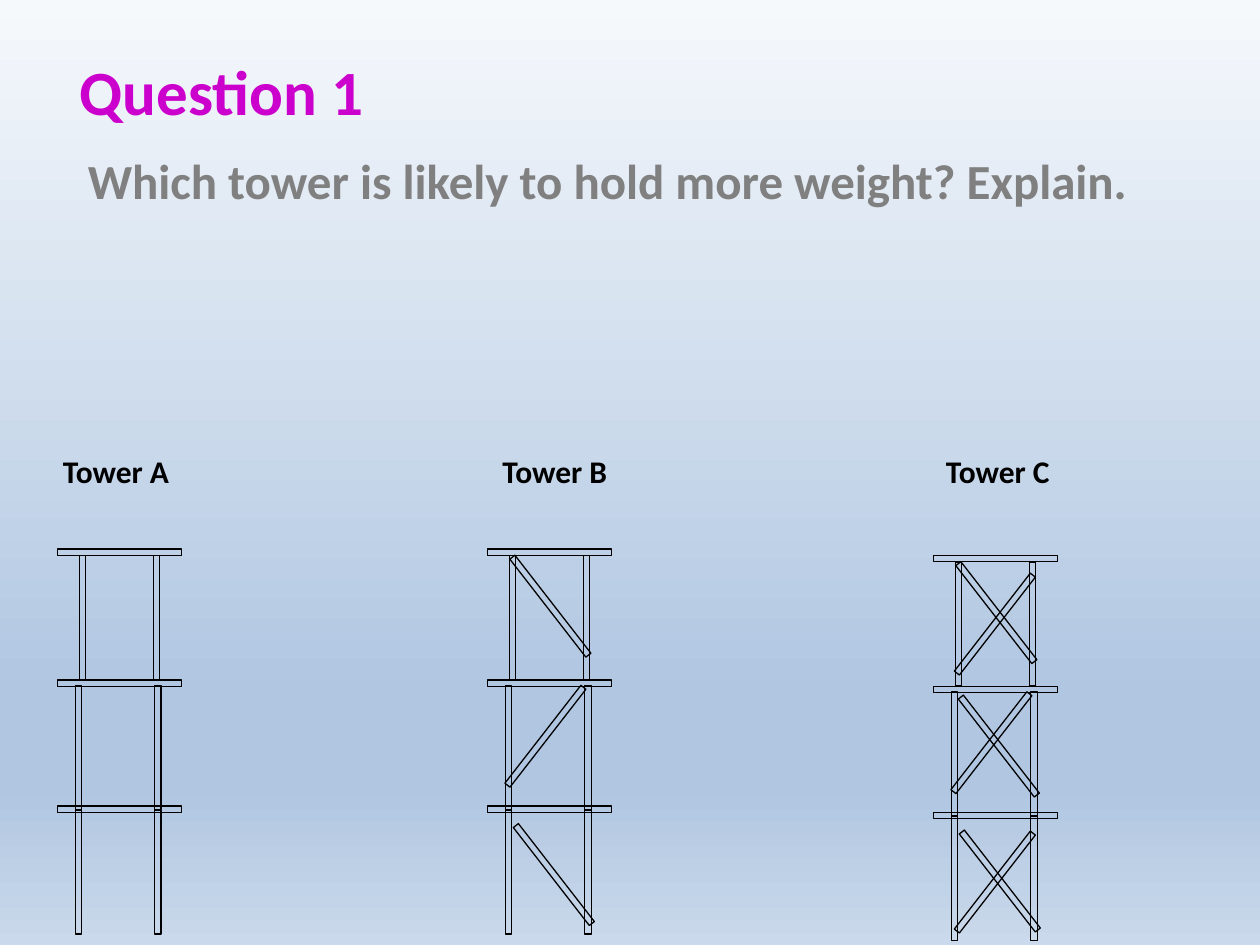
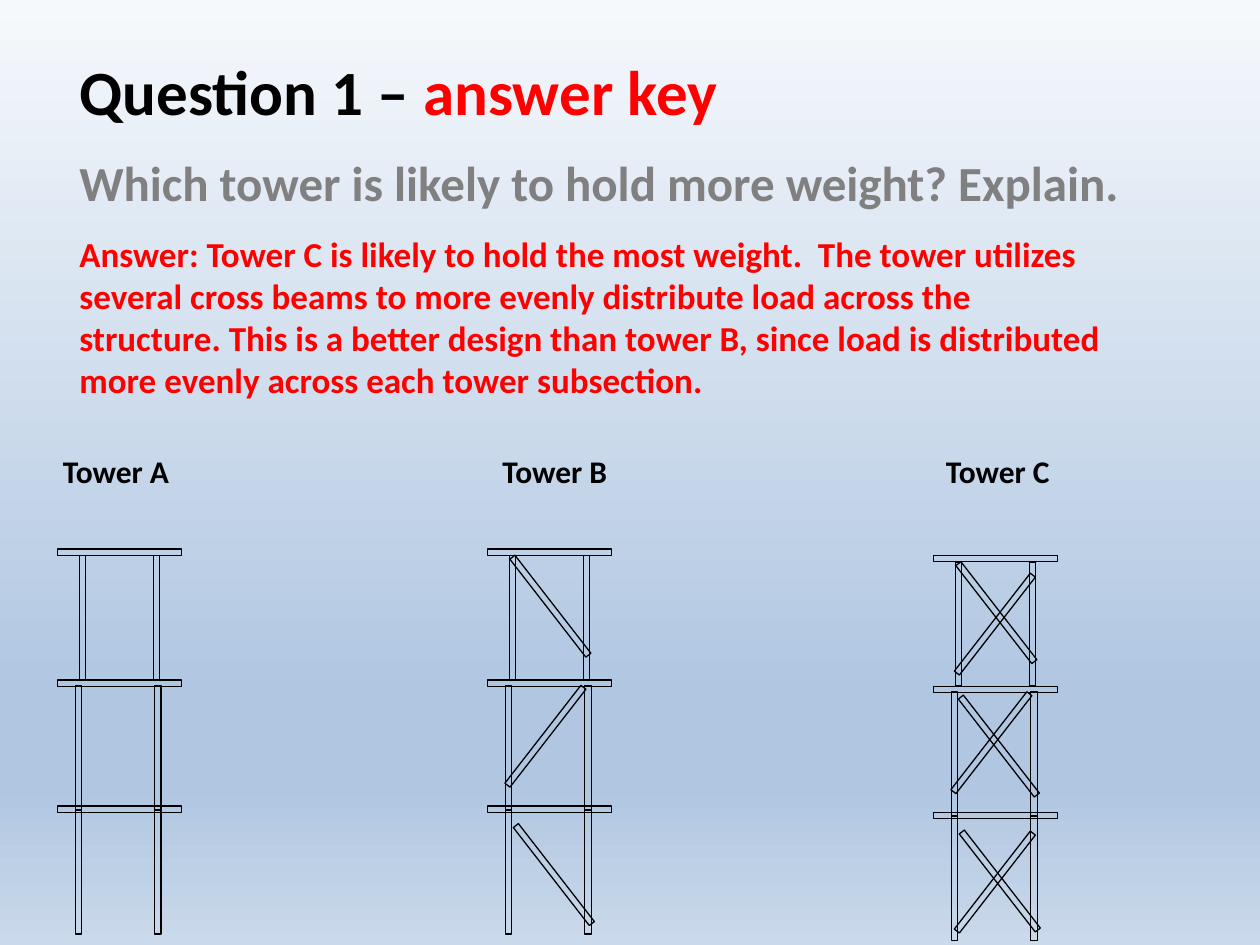
import pptx
import pptx.dml.color
import pptx.enum.shapes
import pptx.enum.text
import pptx.oxml.ns
import pptx.util
from lxml import etree
from pptx.util import Cm

COLORS = {
    "black": "000000",
    "grey": "808080",
    "magenta": "CC00CC",
    "red": "FF0000",
    "sky_top": "F6F9FC",
    "sky_deep": "B0C6E1",
    "sky_bottom": "CAD9EB",
}
FONT = "Calibri"
BACKGROUND_STOPS = [(0, "sky_top"), (74, "sky_deep"), (83, "sky_deep"), (100, "sky_bottom")]

QUESTION = "Which tower is likely to hold more weight? Explain."
ANSWER = (
    "Answer: Tower C is likely to hold the most weight.  The tower utilizes several "
    "cross beams to more evenly distribute load across the structure. This is a better "
    "design than tower B, since load is distributed more evenly across each tower subsection."
)

# Stick places are centimetres from the tower's own corner: left, top, rotation.
FALLING, RISING, LEVEL = 142.2, 217.8, 270
STICK_WIDTH, STICK_LENGTH = 0.13, 2.5
STOREY_TOPS = [0, 2.62, 5.13]
POST_LEFTS = [(0.08, 1.57), (0, 1.6), (0, 1.6)]
BEAM_TOPS = [-1.32, 1.32, 3.86]
FRAME = [
    (left, top, 0) for top, lefts in zip(STOREY_TOPS, POST_LEFTS) for left in lefts
] + [(0.83, top, LEVEL) for top in BEAM_TOPS]
SINGLE_BRACES = [(0.84, -0.23, FALLING), (0.74, 2.39, RISING), (0.91, 5.18, FALLING)]
SECOND_BRACES = [(0.81, 0, RISING), (0.89, 2.46, FALLING), (0.81, 5.2, RISING)]

# Name, tower left, tower top, label left, label width, braces
TOWERS = [
    ("Tower A", 1.52, 11.2, 1.02, 4.88, []),
    ("Tower B", 10.19, 11.2, 9.88, 3, SINGLE_BRACES),
    ("Tower C", 19.18, 11.33, 18.82, 3, SINGLE_BRACES + SECOND_BRACES),
]

# Title parts, question left and top, answer
PAGES = [
    ([("Question 1", "magenta")], 1.52, 2.9, None),
    ([("Question 1 – ", "black"), ("answer key", "red")], 1.35, 2.95, ANSWER),
]


def write_text(box, place, parts, size):
    """Place a box, given in centimetres, and fill it with coloured spans."""
    box.left, box.top, box.width, box.height = [Cm(length) for length in place]
    frame = box.text_frame
    frame.word_wrap = True
    frame.auto_size = pptx.enum.text.MSO_AUTO_SIZE.SHAPE_TO_FIT_TEXT
    frame.vertical_anchor = pptx.enum.text.MSO_ANCHOR.TOP
    para = frame.paragraphs[0]
    para.alignment = pptx.enum.text.PP_ALIGN.LEFT
    for text, color in parts:
        span = para.add_run()
        span.text = text
        span.font.name = FONT
        span.font.size = pptx.util.Pt(size)
        span.font.bold = True
        span.font.color.rgb = pptx.dml.color.RGBColor.from_string(COLORS[color])


def add_text(page, place, text, size, color):
    box = page.shapes.add_textbox(0, 0, 0, 0)
    write_text(box, place, [(text, color)], size)


deck = pptx.Presentation()
deck.slide_width, deck.slide_height = Cm(25.4), Cm(19.05)

master = deck.slide_master
background = master.background.fill
background.gradient()
background.gradient_angle = 270
qn = pptx.oxml.ns.qn
stop_list = next(master.element.iter(qn("a:gsLst")))
for stop in list(stop_list):
    stop_list.remove(stop)
for percent, color in BACKGROUND_STOPS:
    stop = etree.SubElement(stop_list, qn("a:gs"), pos=str(percent * 1000))
    etree.SubElement(stop, qn("a:srgbClr"), val=COLORS[color])

for title_parts, question_left, question_top, answer in PAGES:
    page = deck.slides.add_slide(deck.slide_layouts.get_by_name("Title Only"))
    write_text(page.shapes.title, (1.35, 0.94, 14.17, 1.8), title_parts, 36)
    add_text(page, (question_left, question_top, 22.35, 1.45), QUESTION, 28, "grey")

    for name, tower_left, tower_top, label_left, label_width, braces in TOWERS:
        for left, top, rotation in FRAME + braces:
            stick = page.shapes.add_shape(
                pptx.enum.shapes.MSO_SHAPE.RECTANGLE,
                Cm(tower_left + left), Cm(tower_top + top),
                Cm(STICK_WIDTH), Cm(STICK_LENGTH),
            )
            stick.rotation = rotation
            stick.shadow.inherit = False
            stick.fill.background()
            stick.line.color.rgb = pptx.dml.color.RGBColor.from_string(COLORS["black"])
            stick.line.width = pptx.util.Pt(0.75)
        add_text(page, (label_left, 8.99, label_width, 1.02), name, 18, "black")

    if answer:
        add_text(page, (1.35, 4.57, 21.31, 3.68), answer, 20, "red")

deck.save("out.pptx")
